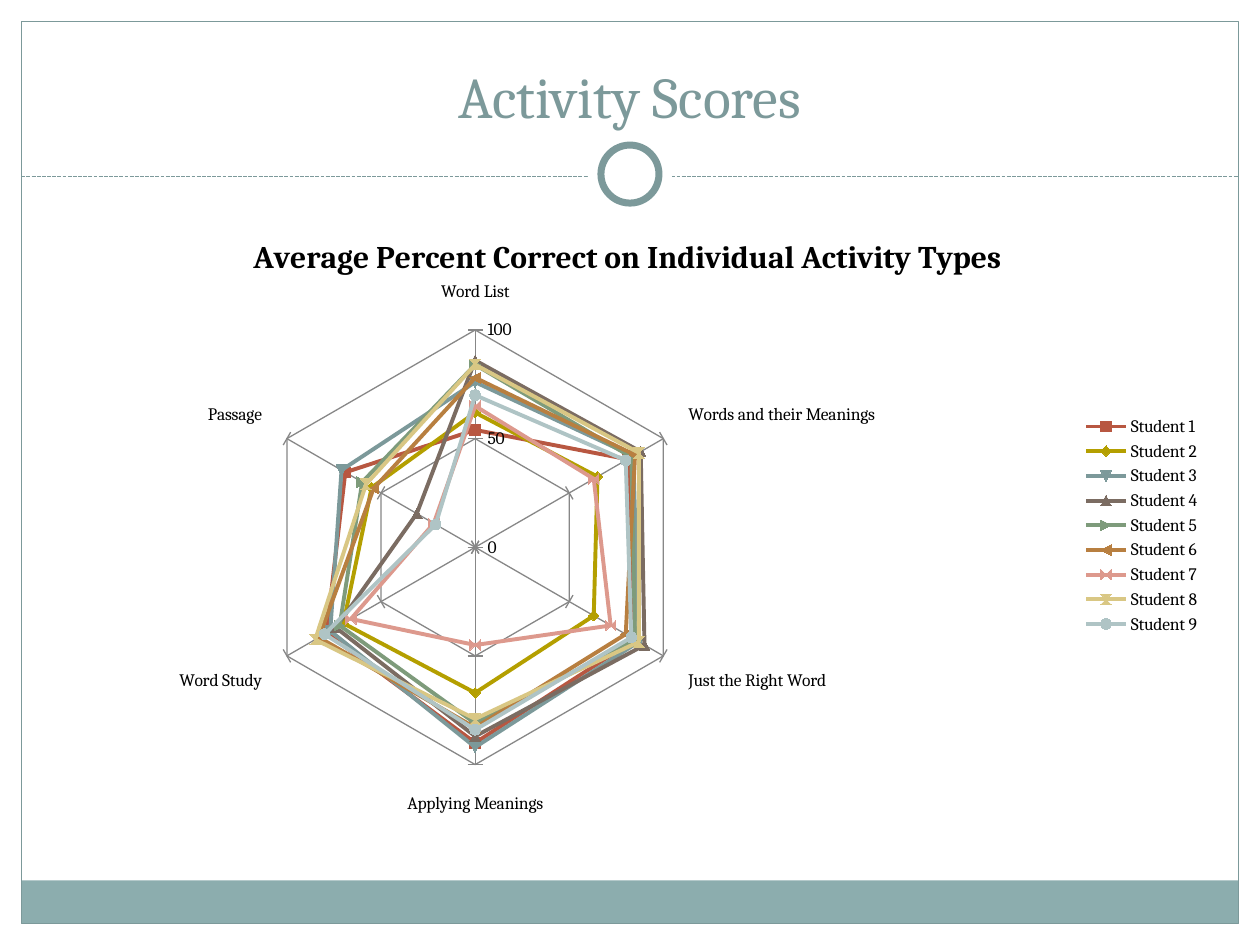
from dataclasses import dataclass
from typing import Any

from lxml import etree
from pptx import Presentation
from pptx import util as u
from pptx.chart.data import CategoryChartData
from pptx.dml.color import RGBColor
from pptx.enum import chart as charts
from pptx.enum import dml, shapes, text
from pptx.oxml import parse_xml
from pptx.oxml.ns import nsdecls, qn


@dataclass(frozen=True)
class Theme:
    font: str = "Cambria"
    white: str = "FFFFFF"
    black: str = "000000"
    accent: str = "7C999A"
    band: str = "8CADAE"
    grid: str = "878787"
    series: tuple = ("B85741", "B49F00", "7C999A", "7B6C62", "7E9B7B",
                     "B87F40", "DD998D", "D9C784", "AFC4C5")
    heading_size: float = 33
    chart_title_size: float = 18
    label_size: float = 10
    hairline: float = 0.75
    ring_line: float = 4
    series_line: float = 2.25
    marker_size: int = 6


@dataclass
class SlideBuilder:
    theme: Theme
    slide: Any

    def style_line(self, line, color, width):
        line.color.rgb = RGBColor.from_string(color)
        line.width = u.Pt(width)

    def style_font(self, font, size, color, bold=False):
        font.name = self.theme.font
        font.size = u.Pt(size)
        font.bold = bold
        font.color.rgb = RGBColor.from_string(color)

    def shape(self, kind, box, fill=None, line=None, width=0.75):
        shape = self.slide.shapes.add_shape(kind, *map(u.Cm, box))
        shape.shadow.inherit = False
        if fill:
            shape.fill.solid()
            shape.fill.fore_color.rgb = RGBColor.from_string(fill)
        else:
            shape.fill.background()
        if line:
            self.style_line(shape.line, line, width)
        else:
            shape.line.fill.background()

    def dashed_line(self, left, right, top):
        connector = self.slide.shapes.add_connector(
            shapes.MSO_CONNECTOR.STRAIGHT, u.Cm(left), u.Cm(top), u.Cm(right), u.Cm(top))
        self.style_line(connector.line, self.theme.accent, self.theme.hairline)
        connector.line.dash_style = dml.MSO_LINE.SQUARE_DOT
        properties = connector.element.find(qn("p:spPr"))
        etree.SubElement(properties, qn("a:effectLst"))

    def heading(self, box, wording):
        frame = self.slide.shapes.add_textbox(*map(u.Cm, box)).text_frame
        frame.word_wrap = True
        frame.vertical_anchor = text.MSO_ANCHOR.BOTTOM
        frame.text = wording
        paragraph = frame.paragraphs[0]
        paragraph.alignment = text.PP_ALIGN.CENTER
        self.style_font(paragraph.runs[0].font, self.theme.heading_size, self.theme.accent)

    def radar_chart(self, box, title, categories, scores, plot):
        theme = self.theme
        data = CategoryChartData(number_format="General")
        data.categories = categories
        for name, values in scores.items():
            data.add_series(name, values)
        chart = self.slide.shapes.add_chart(
            charts.XL_CHART_TYPE.RADAR_MARKERS, *map(u.Cm, box), data).chart
        self.style_font(chart.font, theme.label_size, theme.black)

        chart.has_title = True
        chart.chart_title.include_in_layout = False
        frame = chart.chart_title.text_frame
        frame.text = title
        self.style_font(frame.paragraphs[0].runs[0].font,
                        theme.chart_title_size, theme.black, bold=True)

        chart.has_legend = True
        chart.legend.position = charts.XL_LEGEND_POSITION.RIGHT
        chart.legend.include_in_layout = False

        value_axis = chart.value_axis
        value_axis.minimum_scale = 0
        value_axis.maximum_scale = 100
        value_axis.major_unit = 50
        for axis in (chart.category_axis, value_axis):
            axis.has_major_gridlines = True
            axis.major_tick_mark = charts.XL_TICK_MARK.CROSS
            self.style_line(axis.format.line, theme.grid, theme.hairline)
            self.style_line(axis.major_gridlines.format.line, theme.grid, theme.hairline)

        for series, color in zip(chart.plots[0].series, theme.series):
            series.smooth = False
            self.style_line(series.format.line, color, theme.series_line)
            series.marker.size = theme.marker_size
            series.marker.format.fill.solid()
            series.marker.format.fill.fore_color.rgb = RGBColor.from_string(color)
            self.style_line(series.marker.format.line, color, theme.hairline)
        self.place_plot(chart, plot)

    def place_plot(self, chart, plot):
        area = chart.element.find(".//" + qn("c:plotArea"))
        for layout in area.findall(qn("c:layout")):
            area.remove(layout)
        sizes = "".join(f'<c:{key} val="{value}"/>' for key, value in zip("xywh", plot))
        area.insert(0, parse_xml(
            f'<c:layout {nsdecls("c")}><c:manualLayout><c:layoutTarget val="inner"/>'
            f'<c:xMode val="edge"/><c:yMode val="edge"/>{sizes}</c:manualLayout></c:layout>'))


CATEGORIES = ["Word List", "Words and their Meanings", "Just the Right Word",
              "Applying Meanings", "Word Study", "Passage"]
STUDENT_SCORES = [
    (54, 81, 85, 90, 79, 69),
    (62, 65, 63, 67, 70, 55),
    (76, 84, 87, 92, 77, 71),
    (86, 88, 90, 87, 74, 31),
    (84, 83, 85, 81, 72, 60),
    (78, 85, 80, 83, 83, 54),
    (65, 63, 72, 45, 66, 22),
    (84, 87, 87, 79, 85, 58),
    (70, 80, 83, 84, 80, 21),
]
WIDTH, HEIGHT, MARGIN = 25.4, 19.05, 0.43


def main():
    presentation = Presentation()
    presentation.slide_width = u.Cm(WIDTH)
    presentation.slide_height = u.Cm(HEIGHT)
    slide = presentation.slides.add_slide(presentation.slide_layouts[6])
    theme = Theme()
    builder = SlideBuilder(theme, slide)
    rectangle, oval = shapes.MSO_SHAPE.RECTANGLE, shapes.MSO_SHAPE.OVAL
    inner_width = WIDTH - 2 * MARGIN

    for box in ((0, 0, WIDTH, 3.86), (0, 0, MARGIN, HEIGHT),
                (WIDTH - MARGIN, 0, MARGIN, HEIGHT)):
        builder.shape(rectangle, box, fill=theme.white)
    builder.shape(rectangle, (MARGIN, 17.75, inner_width, 0.87), fill=theme.band)
    builder.shape(rectangle, (MARGIN, MARGIN, inner_width, HEIGHT - 2 * MARGIN),
                  line=theme.accent, width=theme.hairline)
    builder.dashed_line(MARGIN, WIDTH - MARGIN, 3.56)
    for size, line in ((1.7, None), (1.17, theme.accent)):
        builder.shape(oval, ((WIDTH - size) / 2, 3.51 - size / 2, size, size),
                      fill=theme.white, line=line, width=theme.ring_line)

    builder.heading((0.84, 0.64, 23.71, 2.11), "Activity Scores")
    scores = {f"Student {number}": values
              for number, values in enumerate(STUDENT_SCORES, 1)}
    builder.radar_chart((0.84, 4.24, 23.62, 12.7),
                        "Average Percent Correct on Individual Activity Types",
                        CATEGORIES, scores, (0.16, 0.19, 0.42, 0.69))
    presentation.save("out.pptx")


if __name__ == "__main__":
    main()
